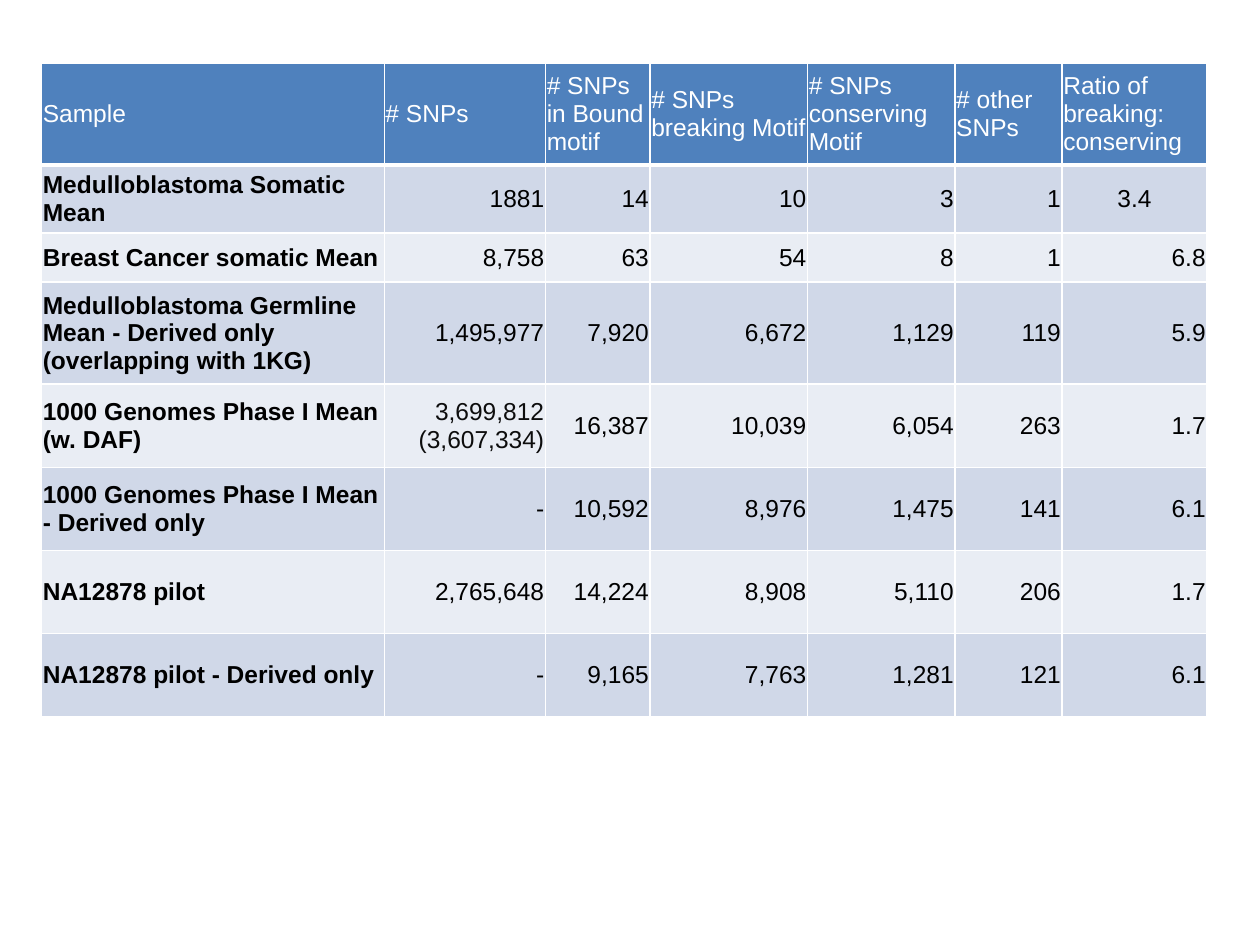
from lxml.etree import SubElement
from pptx import Presentation
from pptx.dml.color import RGBColor
from pptx.enum.text import MSO_ANCHOR, PP_ALIGN
from pptx.oxml.ns import qn
from pptx.util import Inches, Pt

COLORS = {"head": "4F81BD", "odd": "D0D8E8", "even": "E9EDF4",
          "white": "FFFFFF", "black": "000000", "soft": "0D0D0D"}
COLS = [2.72, 1.28, 0.83, 1.25, 1.17, 0.85, 1.15]
ROWS = [0.81, 0.54, 0.39, 0.81] + [0.66] * 4
DATA = [
    ["Sample", "# SNPs", "# SNPs in Bound motif", "# SNPs breaking Motif",
     "# SNPs conserving Motif", "# other SNPs", "Ratio of breaking:\nconserving"],
    ["Medulloblastoma Somatic\nMean", "1881", "14", "10", "3", "1", "3.4"],
    ["Breast Cancer somatic Mean", "8,758", "63", "54", "8", "1", "6.8"],
    ["Medulloblastoma Germline Mean - Derived only (overlapping with 1KG)",
     "1,495,977", "7,920", "6,672", "1,129", "119", "5.9"],
    ["1000 Genomes Phase I Mean (w. DAF)", "3,699,812 (3,607,334)",
     "16,387", "10,039", "6,054", "263", "1.7"],
    ["1000 Genomes Phase I Mean\n- Derived only", "-",
     "10,592", "8,976", "1,475", "141", "6.1"],
    ["NA12878 pilot", "2,765,648", "14,224", "8,908", "5,110", "206", "1.7"],
    ["NA12878 pilot - Derived only", "-", "9,165", "7,763", "1,281", "121", "6.1"],
]


def rgb(name):
    """Return the named colour."""
    return RGBColor.from_string(COLORS[name])


def rule(cell, row):
    """Draw white borders, thicker between the header and the body."""
    props = cell._tc.get_or_add_tcPr()
    for side in "LRTB":
        thick = (row, side) in [(0, "B"), (1, "T")]
        line = SubElement(props, qn(f"a:ln{side}"), w=str(Pt(3 if thick else 1)))
        fill = SubElement(line, qn("a:solidFill"))
        SubElement(fill, qn("a:srgbClr"), val=COLORS["white"])


def paint(cell, row):
    """Fill a cell by its band and set its margins."""
    rule(cell, row)
    cell.fill.solid()
    cell.fill.fore_color.rgb = rgb("head" if row == 0 else "odd" if row % 2 else "even")
    cell.margin_left = cell.margin_right = Inches(0.01)
    cell.margin_top = cell.margin_bottom = 0
    cell.vertical_anchor = MSO_ANCHOR.MIDDLE


def write(cell, text, row, col):
    """Put styled text in a cell."""
    cell.text = text
    tone = "white" if row == 0 else "soft" if (row, col) == (4, 1) else "black"
    align = PP_ALIGN.LEFT if row == 0 or col == 0 else PP_ALIGN.RIGHT
    if (row, col) == (1, 6):
        align = PP_ALIGN.CENTER
    for para in cell.text_frame.paragraphs:
        para.alignment = align
        para.font.name = "Arial"
        para.font.size = Pt(14)
        para.font.bold = row > 0 and col == 0
        para.font.color.rgb = rgb(tone)


def grid(slide):
    """Add the table of SNP counts."""
    frame = slide.shapes.add_table(len(ROWS), len(COLS), Inches(0.33), Inches(0.5),
                                   Inches(sum(COLS)), Inches(sum(ROWS)))
    table = frame.table
    for col, width in zip(table.columns, COLS):
        col.width = Inches(width)
    for row, height in zip(table.rows, ROWS):
        row.height = Inches(height)
    for row, texts in enumerate(DATA):
        for col, text in enumerate(texts):
            cell = table.cell(row, col)
            paint(cell, row)
            write(cell, text, row, col)


def main():
    """Build and save the slide."""
    deck = Presentation()
    deck.slide_width, deck.slide_height = Inches(10), Inches(7.5)
    grid(deck.slides.add_slide(deck.slide_layouts[6]))
    deck.save("out.pptx")


if __name__ == "__main__":
    main()
